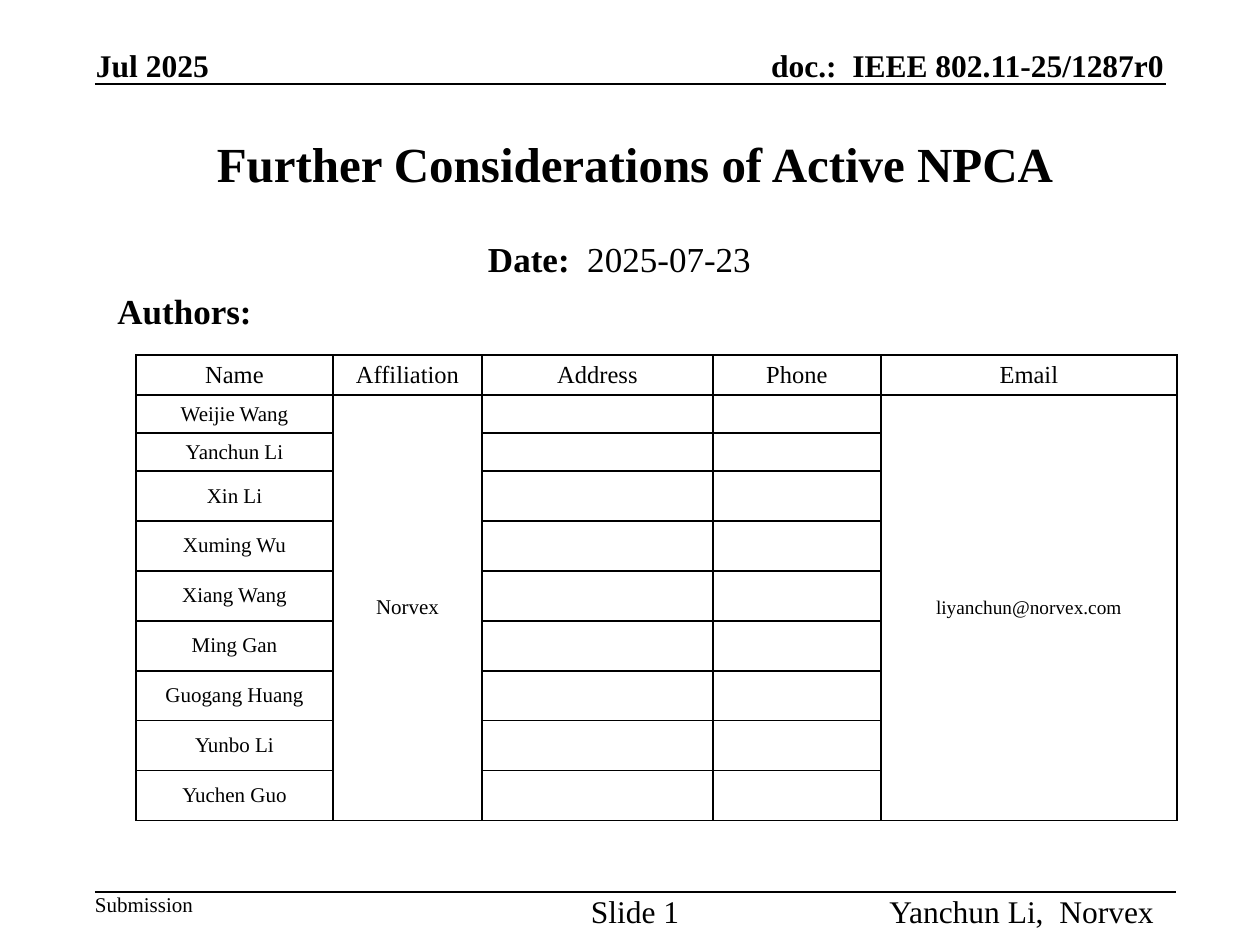
from dataclasses import dataclass

from lxml import etree
from pptx import Presentation
from pptx import util as u
from pptx.dml.color import RGBColor
from pptx.enum import shapes, text
from pptx.oxml.ns import qn

PX = 914400 / 126
AUTHORS = ["Weijie Wang", "Yanchun Li", "Xin Li", "Xuming Wu", "Xiang Wang",
           "Ming Gan", "Guogang Huang", "Yunbo Li", "Yuchen Guo"]
HEADINGS = ["Name", "Affiliation", "Address", "Phone", "Email"]
COMPANY = "Norvex"
EMAIL = "liyanchun@norvex.com"
LEFT, CENTER, RIGHT = text.PP_ALIGN.LEFT, text.PP_ALIGN.CENTER, text.PP_ALIGN.RIGHT
TOP, MIDDLE, BOTTOM = (text.MSO_ANCHOR.TOP, text.MSO_ANCHOR.MIDDLE,
                       text.MSO_ANCHOR.BOTTOM)


@dataclass(frozen=True)
class Theme:
    """Colours, font and type sizes of the deck."""
    ink: RGBColor = RGBColor(0, 0, 0)
    paper: RGBColor = RGBColor(255, 255, 255)
    font: str = "Times New Roman"
    title: int = 28
    lead: int = 20
    running: int = 18
    heading: int = 14
    small: int = 12
    email: int = 11
    rule: int = 1


THEME = Theme()


def px(length):
    """Turn px into EMU."""
    return u.Emu(round(length * PX))


def style(para, size, bold=False, align=LEFT):
    """Set the font and alignment of a paragraph."""
    para.alignment = align
    para.font.name = THEME.font
    para.font.size = u.Pt(size)
    para.font.bold = bold
    para.font.color.rgb = THEME.ink


def add_text(page, box, words, size, bold=False, align=LEFT, anchor=TOP, inset=True):
    """Add a one-paragraph text box; without inset its line is never wrapped."""
    frame = page.shapes.add_textbox(*map(px, box)).text_frame
    frame.word_wrap = inset
    frame.vertical_anchor = anchor
    if not inset:
        frame.margin_left = frame.margin_right = 0
        frame.margin_top = frame.margin_bottom = 0
    para = frame.paragraphs[0]
    para.add_run().text = words
    style(para, size, bold, align)
    return para


def add_rule(page, left, top, width):
    """Add a horizontal rule."""
    line = page.shapes.add_connector(
        shapes.MSO_CONNECTOR.STRAIGHT, px(left), px(top), px(left + width), px(top))
    line.line.color.rgb = THEME.ink
    line.line.width = u.Pt(THEME.rule)
    etree.SubElement(line._element.spPr, qn("a:effectLst"))


def add_header(page, left, top, width, height):
    """Add the date and document number above a rule."""
    add_text(page, (left + 1, top, 120, height), "Jul 2025", THEME.running,
             True, LEFT, BOTTOM, False)
    add_text(page, (left + width - 462, top, 460, height),
             "doc.:  IEEE 802.11-25/1287r0", THEME.running, True, RIGHT, BOTTOM, False)
    add_rule(page, left, top + height, width)


def add_heading(page, left, top, width, height):
    """Add the title, the date line and the authors label."""
    title = add_text(page, (left, top, width, 105),
                     "Further Considerations of Active NPCA", THEME.title,
                     True, CENTER, MIDDLE)
    title.line_spacing = 1.2
    date = add_text(page, (left + 21, top + 126, 1071, 53), "Date: ", THEME.lead,
                    align=CENTER)
    date.runs[0].font.bold = True
    date.add_run().text = " 2025-07-23"
    add_text(page, (left + 42, top + height - 53, 200, 53), "Authors:",
             THEME.lead, True)


def add_borders(cell):
    """Draw a thin line on all four sides of a cell."""
    props = cell._tc.get_or_add_tcPr()
    for place, side in enumerate(("a:lnL", "a:lnR", "a:lnT", "a:lnB")):
        line = etree.Element(qn(side), w=str(u.Pt(THEME.rule)))
        fill = etree.SubElement(line, qn("a:solidFill"))
        etree.SubElement(fill, qn("a:srgbClr"), val=str(THEME.ink))
        props.insert(place, line)


def add_authors(page, left, top, width, height):
    """Add the table of authors with shared affiliation and email."""
    rows = [HEADINGS] + [[name, "", "", "", ""] for name in AUTHORS]
    rows[1][1], rows[1][4] = COMPANY, EMAIL
    table = page.shapes.add_table(
        len(rows), len(HEADINGS), px(left), px(top), px(width), px(height)).table
    table.first_row = table.horz_banding = False
    for column, size in zip(table.columns, (197, 149, 231, 168, width - 745)):
        column.width = px(size)
    for index, row in enumerate(table.rows):
        row.height = px((40, 38, 38)[index] if index < 3 else 50)
        for cell, words in zip(row.cells, rows[index]):
            cell.fill.solid()
            cell.fill.fore_color.rgb = THEME.paper
            cell.vertical_anchor = MIDDLE
            cell.margin_left = cell.margin_right = px(9)
            cell.margin_top = cell.margin_bottom = px(0)
            cell.text = words
            size = (THEME.heading if index == 0
                    else THEME.email if words == EMAIL else THEME.small)
            style(cell.text_frame.paragraphs[0], size, align=CENTER)
            add_borders(cell)
    for column in (1, 4):
        table.cell(1, column).merge(table.cell(len(AUTHORS), column))


def add_footer(page, left, top, width, height):
    """Add the footer rule with its three labels."""
    add_rule(page, left, top, width)
    labels = [(0, 120, "Submission", THEME.small, LEFT),
              (480, 120, "Slide 1", THEME.running, CENTER),
              (759, 300, f"Yanchun Li,  {COMPANY}", THEME.running, RIGHT)]
    for offset, span, words, size, align in labels:
        add_text(page, (left + offset, top, span, height), words, size,
                 align=align, inset=False)


def main():
    """Build the title slide and save the deck."""
    deck = Presentation()
    deck.slide_width, deck.slide_height = px(1260), px(945)
    page = deck.slides.add_slide(deck.slide_layouts[6])
    add_header(page, 95, 45, 1071, 39)
    add_heading(page, 63, 105, 1144, 231)
    add_authors(page, 136, 355, 1041, 466)
    add_footer(page, 95, 892, 1081, 40)
    deck.save("out.pptx")


if __name__ == "__main__":
    main()
